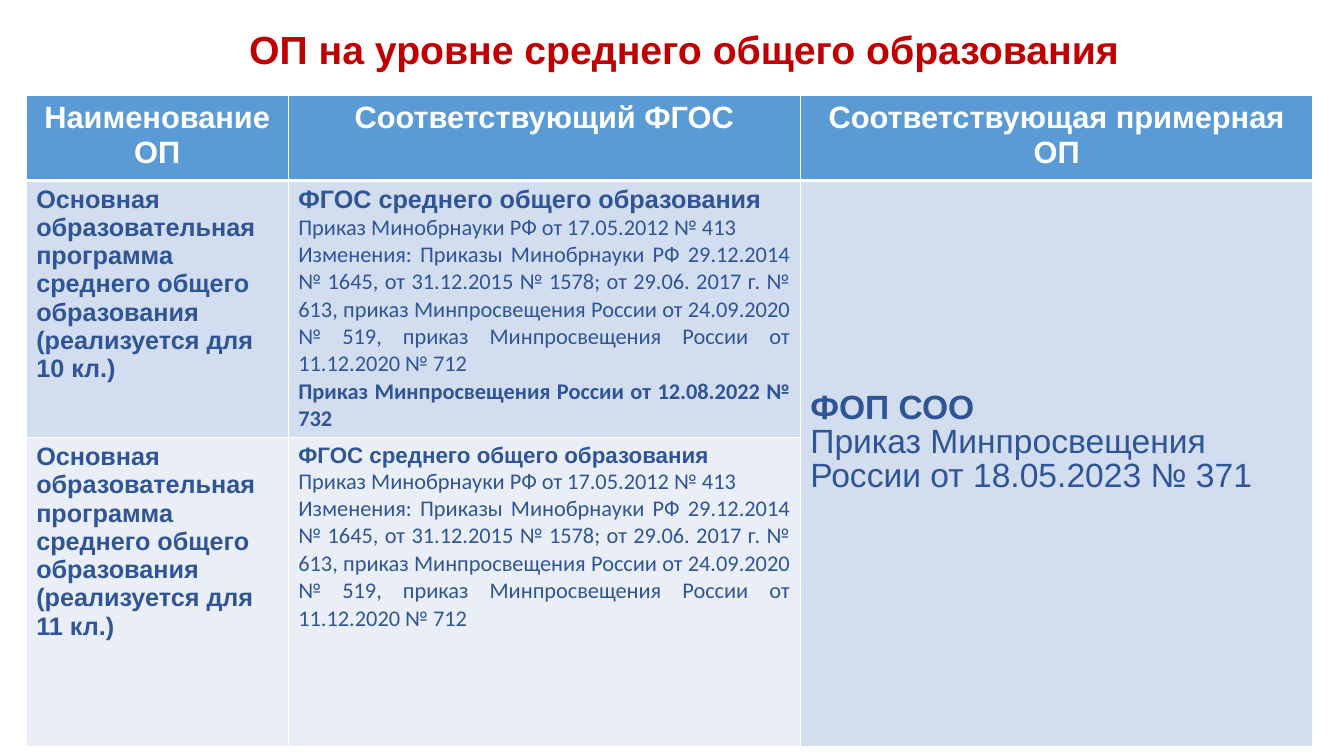
import pptx
import pptx.util
import pptx.dml.color
import pptx.enum.text
import pptx.oxml
import pptx.oxml.ns

ALIGN = pptx.enum.text.PP_ALIGN
NAVY = "2F5597"
BLUE = "5B9BD5"
MID = "D2DEEF"
PALE = "EAEFF7"


def color(code):
    return pptx.dml.color.RGBColor.from_string(code)


def write(para, text, size=18, font="Arial", ink=NAVY, bold=False, align=ALIGN.LEFT, lead=1.0):
    run = para.add_run()
    run.text = text
    run.font.size = pptx.util.Pt(size)
    run.font.name = font
    run.font.bold = bold
    run.font.color.rgb = color(ink)
    para.alignment = align
    para.line_spacing = lead


class Deck:
    def __init__(self, wide, high):
        self.file = pptx.Presentation()
        self.file.slide_width = pptx.util.Inches(wide)
        self.file.slide_height = pptx.util.Inches(high)
        self.slide = self.file.slides.add_slide(self.file.slide_layouts[5])

    def across(self, share):
        return round(self.file.slide_width * share / 100)

    def down(self, share):
        return round(self.file.slide_height * share / 100)

    def title(self, text, left, top, width, height):
        box = self.slide.shapes.title
        box.left, box.top = self.across(left), self.down(top)
        box.width, box.height = self.across(width), self.down(height)
        frame = box.text_frame
        frame.word_wrap = True
        frame.auto_size = pptx.enum.text.MSO_AUTO_SIZE.NONE
        frame.vertical_anchor = pptx.enum.text.MSO_ANCHOR.BOTTOM
        write(frame.paragraphs[0], text, size=28, ink="C00000", bold=True, align=ALIGN.CENTER)

    def table(self, left, top, cols, rows):
        shape = self.slide.shapes.add_table(
            len(rows), len(cols), self.across(left), self.down(top),
            self.across(sum(cols)), self.down(sum(rows)))
        grid = shape.table
        for col, share in zip(grid.columns, cols):
            col.width = self.across(share)
        for row, share in zip(grid.rows, rows):
            row.height = self.down(share)
        return grid

    def cell(self, cell, fill, paras, base=1):
        for spot, (text, style) in enumerate(paras):
            frame = cell.text_frame
            para = frame.add_paragraph() if spot else frame.paragraphs[0]
            write(para, text, **style)
        props = cell._tc.get_or_add_tcPr()
        for side, width in (("L", 1), ("R", 1), ("T", 1), ("B", base)):
            props.append(pptx.oxml.parse_xml(
                f'<a:ln{side} {pptx.oxml.ns.nsdecls("a")} w="{pptx.util.Pt(width)}">'
                f'<a:solidFill><a:srgbClr val="FFFFFF"/></a:solidFill></a:ln{side}>'))
        cell.fill.solid()
        cell.fill.fore_color.rgb = color(fill)


def name(grade):
    return [
        ("Основная образовательная программа среднего общего образования", dict(bold=True)),
        (f"(реализуется для {grade} кл.)", dict(bold=True)),
    ]


def norms(size):
    body = dict(size=16, font="Calibri", align=ALIGN.JUSTIFY)
    return [
        ("ФГОС среднего общего образования", dict(size=size, bold=True, align=ALIGN.JUSTIFY)),
        ("Приказ Минобрнауки РФ от 17.05.2012 № 413", body),
        ("Изменения: Приказы Минобрнауки РФ 29.12.2014 № 1645, от 31.12.2015 № 1578; "
         "от 29.06. 2017 г. № 613, приказ Минпросвещения России от 24.09.2020 № 519, "
         "приказ Минпросвещения России от 11.12.2020 № 712", body),
    ]


def main():
    deck = Deck(13.33, 7.5)
    deck.title("ОП на уровне среднего общего образования", 3.45, -7.2, 94.9, 17.47)
    grid = deck.table(1.95, 12.67, (19.5, 38.1, 38.15), (11.2, 33.6, 40.8))

    heads = ("Наименование ОП", "Соответствующий ФГОС", "Соответствующая примерная ОП")
    style = dict(size=22, ink="FFFFFF", bold=True, align=ALIGN.CENTER)
    for col, head in enumerate(heads):
        deck.cell(grid.cell(0, col), BLUE, [(head, style)], base=3)

    order = ("Приказ Минпросвещения России от 12.08.2022 № 732",
             dict(size=16, font="Calibri", bold=True, align=ALIGN.JUSTIFY))
    plans = ((10, MID, norms(18) + [order]), (11, PALE, norms(16)))
    for row, (grade, fill, rules) in enumerate(plans, 1):
        deck.cell(grid.cell(row, 0), fill, name(grade))
        deck.cell(grid.cell(row, 1), fill, rules)

    model = grid.cell(1, 2)
    model.merge(grid.cell(2, 2))
    model.margin_top = deck.down(27.6)
    deck.cell(model, MID, [
        ("ФОП СОО", dict(size=24, bold=True)),
        ("Приказ Минпросвещения России от 18.05.2023 № 371", dict(size=24, lead=0.9)),
    ])
    deck.file.save("out.pptx")


if __name__ == "__main__":
    main()
